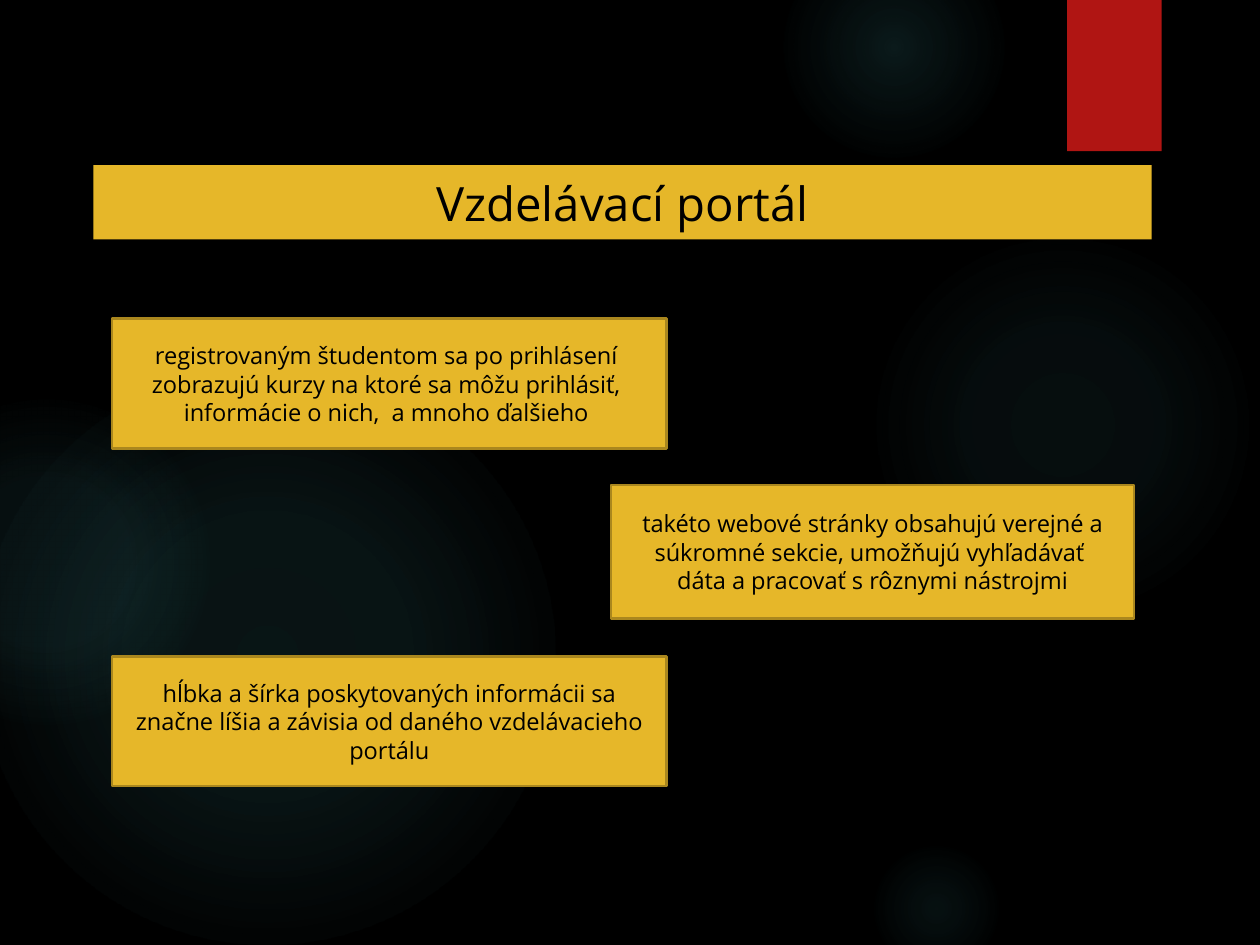
from typing import NamedTuple

from lxml.etree import SubElement
from pptx import Presentation
from pptx.dml.color import RGBColor
from pptx.enum.shapes import MSO_SHAPE
from pptx.enum.text import MSO_ANCHOR, PP_ALIGN
from pptx.oxml.ns import qn
from pptx.util import Inches, Pt

BLACK = RGBColor(0x00, 0x00, 0x00)
GOLD = RGBColor(0xE6, 0xB7, 0x29)
DARK_GOLD = RGBColor(0xAA, 0x87, 0x1E)
RED = RGBColor(0xB0, 0x15, 0x13)
TEAL = RGBColor(0x50, 0xB9, 0xC1)
FONT = "Open Sans"


class Glow(NamedTuple):
    left: float
    top: float
    size: float
    center_alpha: int
    middle_alpha: int
    fade_end: int


class Card(NamedTuple):
    left: float
    top: float
    width: float
    height: float
    paragraphs: list[str]


GLOWS = [
    Glow(6.89, 1.83, 3.08, 7, 6, 69),
    Glow(6.22, -0.5, 1.75, 14, 7, 73),
    Glow(6.89, 6.67, 1.08, 9, 5, 66),
    Glow(-0.17, 2.92, 4.58, 11, 10, 75),
    Glow(-0.92, 3.17, 2.58, 8, 8, 72),
]

CARDS = [
    Card(0.89, 2.53, 4.4, 1.03, [
        "registrovaným študentom sa po prihlásení ",
        "zobrazujú kurzy na ktoré sa môžu prihlásiť, ",
        "informácie o nich,  a mnoho ďalšieho ",
    ]),
    Card(4.85, 3.85, 4.15, 1.06, [
        "takéto webové stránky obsahujú verejné a súkromné sekcie, umožňujú vyhľadávať ",
        "dáta a pracovať s rôznymi nástrojmi",
    ]),
    Card(0.89, 5.21, 4.4, 1.03, [
        "hĺbka a šírka poskytovaných informácii sa značne líšia "
        "a závisia od daného vzdelávacieho portálu",
    ]),
]


def add_box(page, kind: MSO_SHAPE, left: float, top: float, width: float,
            height: float, color: RGBColor):
    box = page.shapes.add_shape(
        kind, Inches(left), Inches(top), Inches(width), Inches(height))
    box.shadow.inherit = False
    box.fill.solid()
    box.fill.fore_color.rgb = color
    box.line.fill.background()
    return box


def write_text(box, paragraphs: list[str], *, size: float,
               color: RGBColor = BLACK, align: PP_ALIGN = PP_ALIGN.CENTER) -> None:
    frame = box.text_frame
    frame.word_wrap = True
    frame.vertical_anchor = MSO_ANCHOR.MIDDLE
    for index, text in enumerate(paragraphs):
        para = frame.add_paragraph() if index else frame.paragraphs[0]
        para.alignment = align
        span = para.add_run()
        span.text = text
        span.font.name = FONT
        span.font.size = Pt(size)
        span.font.color.rgb = color


def add_glow(page, glow: Glow) -> None:
    """Draw a circle whose transparent radial gradient fades to nothing."""
    circle = add_box(page, MSO_SHAPE.OVAL, glow.left, glow.top,
                     glow.size, glow.size, TEAL)
    properties = circle.element.spPr
    solid = properties.find(qn("a:solidFill"))
    gradient = SubElement(properties, qn("a:gradFill"), rotWithShape="1")
    properties.replace(solid, gradient)
    stops = SubElement(gradient, qn("a:gsLst"))
    for position, alpha in ((0, glow.center_alpha), (36, glow.middle_alpha),
                            (glow.fade_end, 0)):
        stop = SubElement(stops, qn("a:gs"), pos=str(position * 1000))
        tint = SubElement(stop, qn("a:srgbClr"), val=str(TEAL))
        SubElement(tint, qn("a:alpha"), val=str(alpha * 1000))
    radial = SubElement(gradient, qn("a:path"))
    radial.set("path", "circle")
    SubElement(radial, qn("a:fillToRect"), l="50000", t="50000", r="50000", b="50000")


def add_card(page, card: Card) -> None:
    box = add_box(page, MSO_SHAPE.RECTANGLE, card.left, card.top,
                  card.width, card.height, GOLD)
    box.line.color.rgb = DARK_GOLD
    box.line.width = Pt(1.5)
    write_text(box, card.paragraphs, size=13.5)


def format_title(title, text: str) -> None:
    title.left, title.top = Inches(0.74), Inches(1.31)
    title.width, title.height = Inches(8.4), Inches(0.59)
    title.fill.solid()
    title.fill.fore_color.rgb = GOLD
    write_text(title, [text], size=27)


def main() -> None:
    deck = Presentation()
    deck.slide_width, deck.slide_height = Inches(10), Inches(7.5)
    page = deck.slides.add_slide(deck.slide_layouts[5])
    page.background.fill.solid()
    page.background.fill.fore_color.rgb = BLACK

    for glow in GLOWS:
        add_glow(page, glow)
    add_box(page, MSO_SHAPE.RECTANGLE, 8.47, 0, 0.75, 1.2, RED)
    for card in CARDS:
        add_card(page, card)
    format_title(page.shapes.title, "Vzdelávací portál")
    deck.save("out.pptx")


if __name__ == "__main__":
    main()
